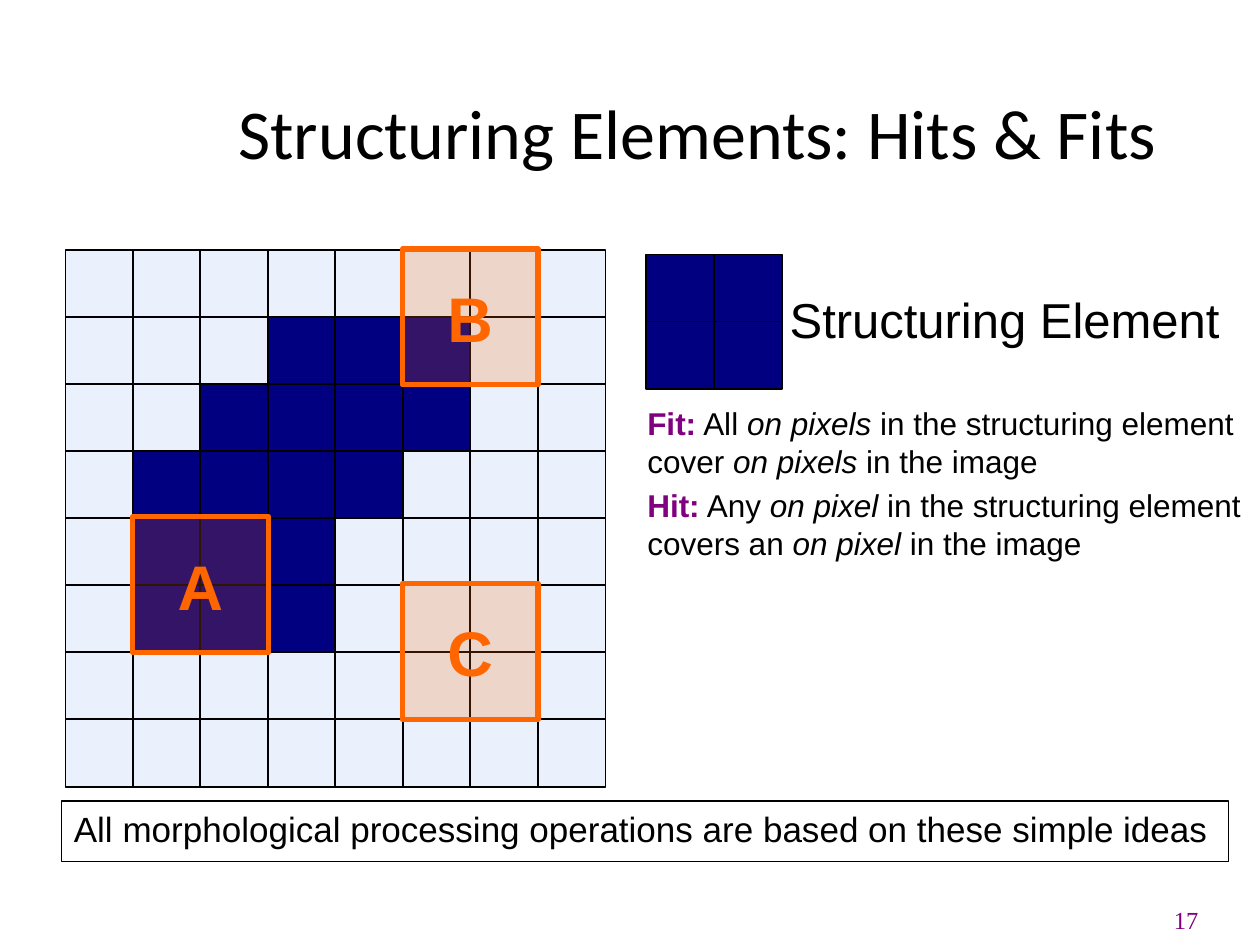
from pptx import Presentation
from pptx.dml.color import RGBColor
from pptx.enum.shapes import MSO_SHAPE
from pptx.enum.text import MSO_ANCHOR, PP_ALIGN
from pptx.oxml.ns import qn
from pptx.util import Cm, Pt
from lxml.etree import SubElement

BLACK, NAVY, PALE = "000000", "000080", "EAF1FC"
ORANGE, PURPLE = "FF6600", "800080"
COLUMN_STEP, ROW_STEP, CELL = 1.36, 1.35, 1.37

IMAGE_ROWS = [
    "........",
    "...###..",
    "..####..",
    ".####...",
    ".###....",
    ".###....",
    "........",
    "........",
]
DEFINITIONS = [
    ("Fit:", " All ", "on pixels", " in the structuring element cover ",
     "on pixels", " in the image"),
    ("Hit:", " Any ", "on pixel", " in the structuring element covers an ",
     "on pixel", " in the image"),
]


def color(value):
    return RGBColor.from_string(value)


def set_font(font, size, value=BLACK, name="Arial", bold=False):
    font.name, font.size, font.bold = name, Pt(size), bold
    font.color.rgb = color(value)


def add_rect(shapes, box, fill, line, width):
    rect = shapes.add_shape(MSO_SHAPE.RECTANGLE, *map(Cm, box))
    rect.shadow.inherit = False
    if fill:
        rect.fill.solid()
        rect.fill.fore_color.rgb = color(fill)
    else:
        rect.fill.background()
    rect.line.color.rgb = color(line)
    rect.line.width = Pt(width)
    return rect


def write(shape, text, size, value=BLACK, name="Arial", bold=False,
          align=PP_ALIGN.LEFT, anchor=MSO_ANCHOR.TOP, wrap=True):
    frame = shape.text_frame
    frame.word_wrap = wrap
    frame.vertical_anchor = anchor
    para = frame.paragraphs[0]
    para.text = text
    para.alignment = align
    set_font(para.font, size, value, name, bold)


def add_label(page, box, text, size, **style):
    write(page.shapes.add_textbox(*map(Cm, box)), text, size, **style)


def add_pixels(shapes, left, top, rows):
    for row, pixels in enumerate(rows):
        for column, pixel in enumerate(pixels):
            box = (left + column * COLUMN_STEP, top + row * ROW_STEP, CELL, CELL)
            add_rect(shapes, box, NAVY if pixel == "#" else PALE, BLACK, 1)


def add_probe(page, letter, left, top):
    probe = add_rect(page.shapes, (left, top, 2.74, 2.74), ORANGE, ORANGE, 3)
    fill_color = probe.fill._xPr.find(qn("a:solidFill"))[0]
    SubElement(fill_color, qn("a:alpha"), val="20000")
    write(probe, letter, 36, ORANGE, bold=True, align=PP_ALIGN.CENTER,
          anchor=MSO_ANCHOR.MIDDLE, wrap=False)


def add_image_grid(page, left, top):
    add_pixels(page.shapes.add_group_shape().shapes, left, top, IMAGE_ROWS)
    for letter, column, row in (("B", 5, 0), ("A", 1, 4), ("C", 5, 5)):
        add_probe(page, letter, left + column * COLUMN_STEP - 0.01,
                  top + row * ROW_STEP - 0.02)


def add_structuring_element(page, left, top):
    add_pixels(page.shapes, left, top, ["##", "##"])
    add_label(page, (left + 2.64, top + 0.59, 9.2, 1.45),
              "Structuring Element", 28, wrap=False)


def add_definitions(page, box):
    frame = page.shapes.add_textbox(*map(Cm, box)).text_frame
    frame.word_wrap = True
    for index, (term, *pieces) in enumerate(DEFINITIONS):
        para = frame.add_paragraph() if index else frame.paragraphs[0]
        if index:
            para.space_before = Pt(3.6)
        set_font(para.font, 18)
        span = para.add_run()
        span.text = term
        span.font.bold = True
        span.font.color.rgb = color(PURPLE)
        for position, piece in enumerate(pieces):
            span = para.add_run()
            span.text = piece
            span.font.italic = position % 2 == 1


def add_conclusion(page, box):
    frame_box = add_rect(page.shapes, box, None, BLACK, 0.75)
    write(frame_box, "All morphological processing operations are based on "
          "these simple ideas", 20)


def main():
    deck = Presentation()
    deck.slide_width, deck.slide_height = Cm(25.4), Cm(19.05)
    page = deck.slides.add_slide(deck.slide_layouts[6])
    add_label(page, (18.31, 17.7, 6.1, 1.27), "17", 14, value=PURPLE,
              name="Times New Roman", align=PP_ALIGN.RIGHT,
              anchor=MSO_ANCHOR.BOTTOM)
    add_label(page, (3.81, 1.07, 20.5, 3.18), "Structuring Elements: Hits & Fits",
              40, name="Calibri", align=PP_ALIGN.CENTER, anchor=MSO_ANCHOR.MIDDLE)
    add_image_grid(page, 1.32, 5.04)
    add_structuring_element(page, 13.03, 5.13)
    add_definitions(page, (12.8, 8.03, 12.65, 7.85))
    add_conclusion(page, (1.24, 16.15, 23.52, 1.22))
    deck.save("out.pptx")


if __name__ == "__main__":
    main()
